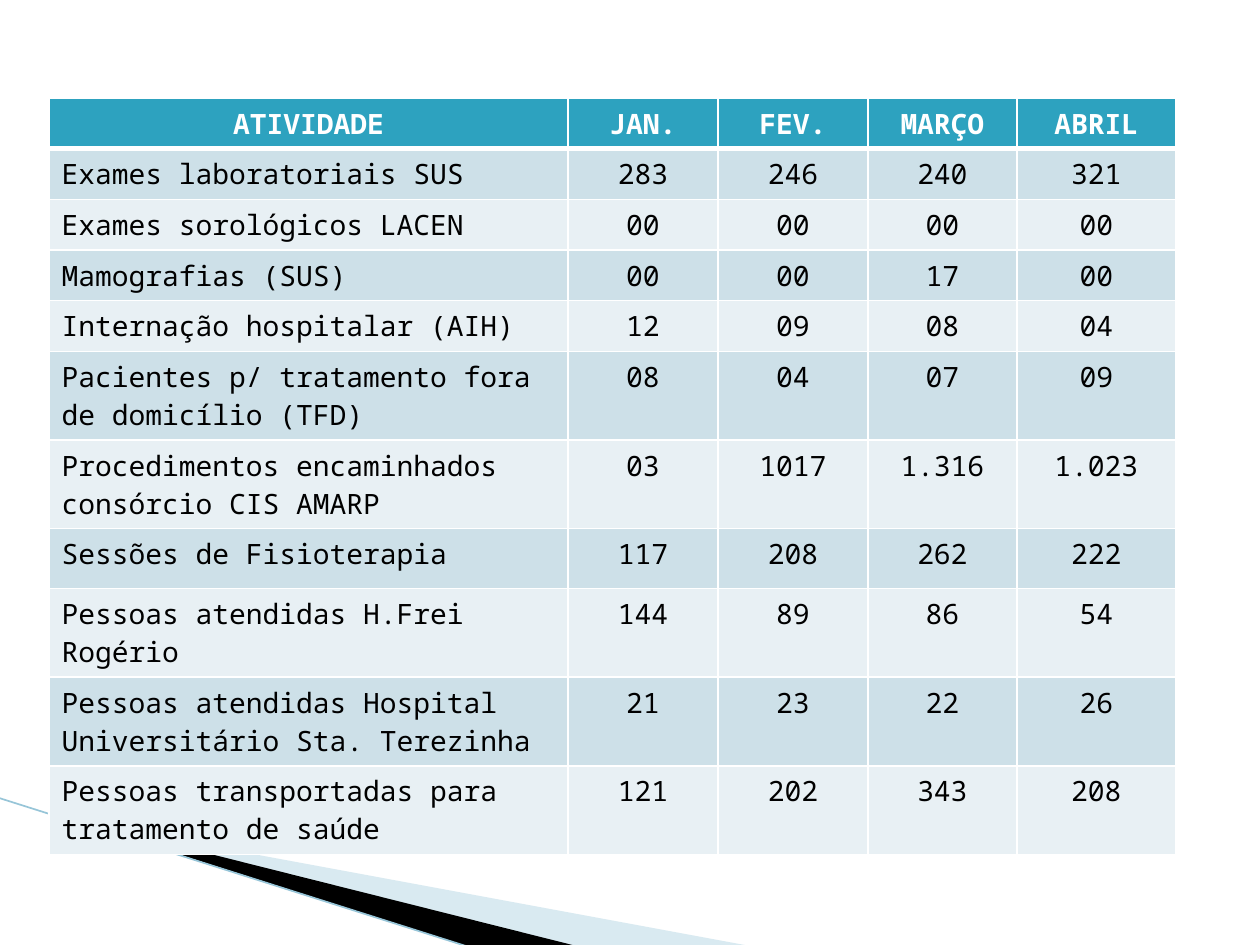
import pptx
import pptx.dml.color
import pptx.enum.shapes
import pptx.enum.text
import pptx.oxml
import pptx.oxml.ns
import pptx.util

RGBColor = pptx.dml.color.RGBColor
WHITE = RGBColor(0xFF, 0xFF, 0xFF)
BLACK = RGBColor(0x00, 0x00, 0x00)
TEAL = RGBColor(0x2D, 0xA2, 0xBF)
ROW_BLUE = RGBColor(0xCD, 0xE0, 0xE8)
ROW_PALE = RGBColor(0xE8, 0xF0, 0xF4)
SWOOSH_BLUE = RGBColor(0xA0, 0xCB, 0xDC)
LINE_BLUE = RGBColor(0x97, 0xC5, 0xD8)

EMU_PER_PX = 914400 / 126
SLIDE_SIZE = (1260, 945)
NAMESPACE = pptx.oxml.ns.nsdecls("a")

HEADER_FORMAT = {"name": "Noto Sans Mono", "size": pptx.util.Pt(16), "bold": True}
BODY_FORMAT = {**HEADER_FORMAT, "bold": False}

COLUMN_WIDTHS = (519, 150, 150, 149, 159)
ROW_HEIGHTS = (49, 48, 48, 48, 48, 84, 84, 60, 48, 84, 84)
ACTIVITIES = (
    ("ATIVIDADE", "JAN.", "FEV.", "MARÇO", "ABRIL"),
    ("Exames laboratoriais SUS", "283", "246", "240", "321"),
    ("Exames sorológicos LACEN", "00", "00", "00", "00"),
    ("Mamografias (SUS)", "00", "00", "17", "00"),
    ("Internação hospitalar (AIH)", "12", "09", "08", "04"),
    ("Pacientes p/ tratamento fora de domicílio (TFD)", "08", "04", "07", "09"),
    ("Procedimentos encaminhados consórcio CIS AMARP", "03", "1017", "1.316", "1.023"),
    ("Sessões de Fisioterapia", "117", "208", "262", "222"),
    ("Pessoas atendidas H.Frei Rogério", "144", "89", "86", "54"),
    ("Pessoas atendidas Hospital Universitário Sta. Terezinha", "21", "23", "22", "26"),
    ("Pessoas transportadas para tratamento de saúde", "121", "202", "343", "208"),
)


def px(value):
    return pptx.util.Emu(round(value * EMU_PER_PX))


class SlideBuilder:
    """Holds the slide being drawn and the look of its elements."""

    def __init__(self, slide):
        self.slide = slide

    def freeform(self, points, color, opacity=100):
        start, *others = [(px(x), px(y)) for x, y in points]
        builder = self.slide.shapes.build_freeform(*start)
        builder.add_line_segments(others, close=True)
        shape = builder.convert_to_shape()
        shape.shadow.inherit = False
        shape.line.fill.background()
        shape.fill.solid()
        shape.fill.fore_color.rgb = color
        if opacity < 100:
            color_element = shape.fill._xPr.find(".//" + pptx.oxml.ns.qn("a:srgbClr"))
            color_element.append(pptx.oxml.parse_xml(
                f'<a:alpha {NAMESPACE} val="{opacity * 1000}"/>'))

    def line(self, start, end, color, width):
        connector = self.slide.shapes.add_connector(
            pptx.enum.shapes.MSO_CONNECTOR.STRAIGHT,
            *[px(value) for value in start + end])
        connector.line.color.rgb = color
        connector.line.width = pptx.util.Pt(width)
        connector._element.spPr.append(
            pptx.oxml.parse_xml(f"<a:effectLst {NAMESPACE}/>"))

    def table(self, left, top, column_widths, row_heights, rows):
        frame = self.slide.shapes.add_table(
            len(rows), len(column_widths), px(left), px(top),
            px(sum(column_widths)), px(sum(row_heights)))
        table = frame.table
        for column, width in zip(table.columns, column_widths):
            column.width = px(width)
        for row, height in zip(table.rows, row_heights):
            row.height = px(height)
        for row_index, texts in enumerate(rows):
            for column_index, text in enumerate(texts):
                self.cell(table.cell(row_index, column_index), text,
                          row_index, column_index)

    def cell(self, cell, text, row_index, column_index):
        is_header = row_index == 0
        self.borders(cell, {"L": 1, "R": 1,
                            "T": 3 if row_index == 1 else 1,
                            "B": 3 if is_header else 1})
        cell.fill.solid()
        cell.fill.fore_color.rgb = (
            TEAL if is_header else ROW_BLUE if row_index % 2 else ROW_PALE)
        paragraph = cell.text_frame.paragraphs[0]
        if is_header or column_index > 0:
            paragraph.alignment = pptx.enum.text.PP_ALIGN.CENTER
        run = paragraph.add_run()
        run.text = text
        for name, value in (HEADER_FORMAT if is_header else BODY_FORMAT).items():
            setattr(run.font, name, value)
        run.font.color.rgb = WHITE if is_header else BLACK

    def borders(self, cell, widths):
        """Draw white borders; must come before the cell's fill."""
        properties = cell._tc.get_or_add_tcPr()
        for side, width in widths.items():
            properties.append(pptx.oxml.parse_xml(
                f'<a:ln{side} {NAMESPACE} w="{pptx.util.Pt(width)}"><a:solidFill>'
                f'<a:srgbClr val="{WHITE}"/></a:solidFill></a:ln{side}>'))


def main():
    presentation = pptx.Presentation()
    presentation.slide_width, presentation.slide_height = map(px, SLIDE_SIZE)
    blank_layout = presentation.slide_layouts[6]
    builder = SlideBuilder(presentation.slides.add_slide(blank_layout))

    builder.freeform([(69, 820), (750, 946), (575, 946), (69, 819)],
                     SWOOSH_BLUE, opacity=40)
    builder.freeform([(67, 818), (576, 946), (469, 947), (68, 819)], BLACK)
    builder.line((-1, 798), (469, 947), LINE_BLUE, 0.95)
    builder.table(49, 98, COLUMN_WIDTHS, ROW_HEIGHTS, ACTIVITIES)

    presentation.save("out.pptx")


if __name__ == "__main__":
    main()
